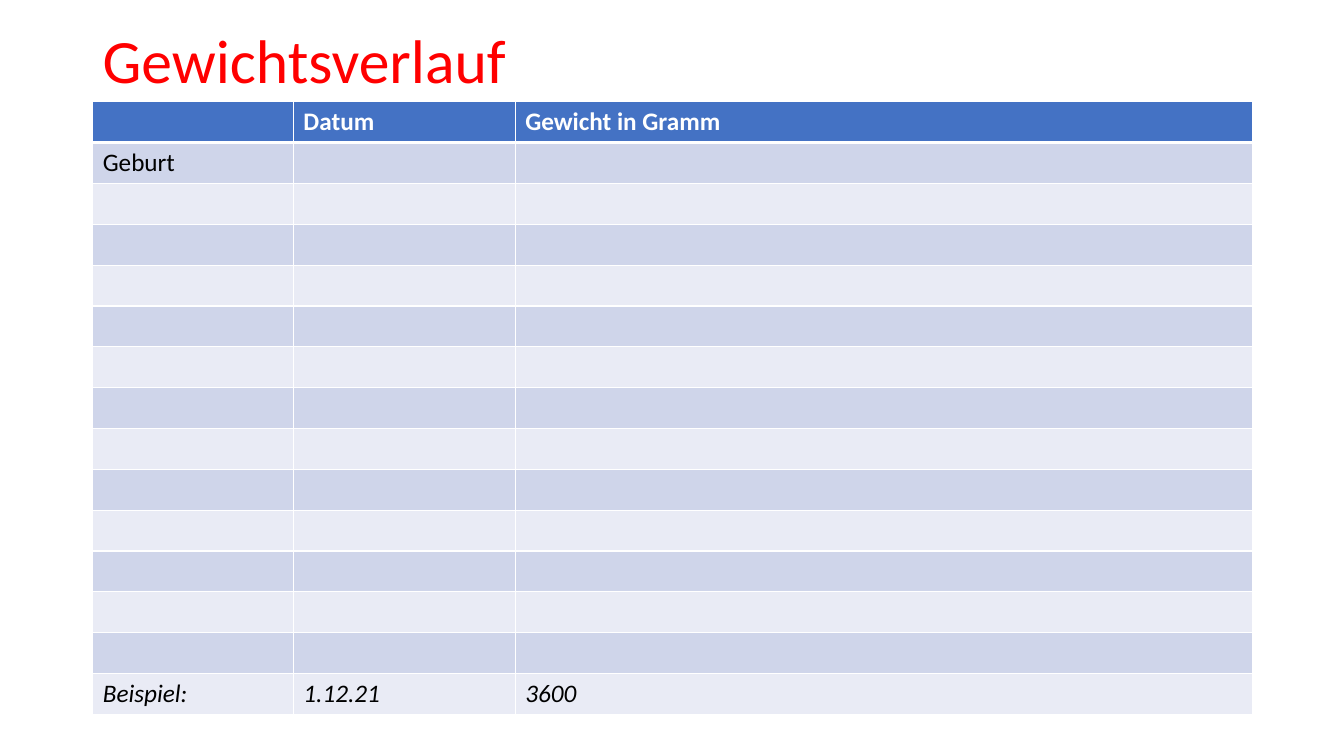
import dataclasses

import pptx
import pptx.dml.color
import pptx.enum.text
import pptx.oxml
import pptx.oxml.ns
import pptx.util

Inches = pptx.util.Inches


@dataclasses.dataclass(frozen=True)
class Theme:
    font: str = "Calibri"
    title_size: int = 44
    cell_size: int = 18
    title: str = "FF0000"
    text: str = "000000"
    header: str = "4472C4"
    header_text: str = "FFFFFF"
    bands: tuple = ("E9EBF5", "CFD5EA")
    grid: str = "FFFFFF"
    grid_width: int = 1
    header_rule_width: int = 3


def write_text(frame, text, *, font, size, color, bold=False, italic=False, line_spacing=None):
    paragraph = frame.paragraphs[0]
    paragraph.line_spacing = line_spacing
    run = paragraph.add_run()
    run.text = text
    run.font.name = font
    run.font.size = pptx.util.Pt(size)
    run.font.bold = bold
    run.font.italic = italic
    run.font.color.rgb = pptx.dml.color.RGBColor.from_string(color)


class SlideBuilder:
    def __init__(self, slide, theme):
        self.slide = slide
        self.theme = theme

    def title(self, text, left, top, width, height):
        box = self.slide.shapes.add_textbox(Inches(left), Inches(top), Inches(width), Inches(height))
        frame = box.text_frame
        frame.word_wrap = True
        frame.vertical_anchor = pptx.enum.text.MSO_ANCHOR.MIDDLE
        write_text(frame, text, font=self.theme.font, size=self.theme.title_size,
                   color=self.theme.title, line_spacing=0.9)

    def border(self, cell, side, width):
        line = pptx.oxml.parse_xml(
            f'<a:{side} {pptx.oxml.ns.nsdecls("a")} w="{pptx.util.Pt(width)}">'
            f'<a:solidFill><a:srgbClr val="{self.theme.grid}"/></a:solidFill></a:{side}>')
        cell._tc.get_or_add_tcPr().append(line)

    def cell(self, cell, text, row, italic):
        theme = self.theme
        is_header = row == 0
        top_width = theme.header_rule_width if row == 1 else theme.grid_width
        bottom_width = theme.header_rule_width if is_header else theme.grid_width
        for side, width in (("lnL", theme.grid_width), ("lnR", theme.grid_width),
                            ("lnT", top_width), ("lnB", bottom_width)):
            self.border(cell, side, width)
        fill = theme.header if is_header else theme.bands[row % 2]
        cell.fill.solid()
        cell.fill.fore_color.rgb = pptx.dml.color.RGBColor.from_string(fill)
        if text:
            write_text(cell.text_frame, text, font=theme.font, size=theme.cell_size,
                       color=theme.header_text if is_header else theme.text,
                       bold=is_header, italic=italic)

    def table(self, rows, left, top, column_widths, row_height):
        table = self.slide.shapes.add_table(
            len(rows), len(column_widths), Inches(left), Inches(top),
            Inches(sum(column_widths)), Inches(row_height * len(rows))).table
        for column, width in zip(table.columns, column_widths):
            column.width = Inches(width)
        for index, texts in enumerate(rows):
            table.rows[index].height = Inches(row_height)
            for column, text in enumerate(texts):
                self.cell(table.cell(index, column), text, index, italic=index == len(rows) - 1)


def main():
    presentation = pptx.Presentation()
    presentation.slide_width = Inches(13.33)
    presentation.slide_height = Inches(7.5)
    slide = presentation.slides.add_slide(presentation.slide_layouts[6])
    builder = SlideBuilder(slide, Theme())

    builder.title("Gewichtsverlauf", 0.92, -0.09, 11.5, 1.45)
    open_entries = [("", "", "")] * 12
    weight_log = [
        ("", "Datum", "Gewicht in Gramm"),
        ("Geburt", "", ""),
        *open_entries,
        ("Beispiel:", "1.12.21", "3600"),
    ]
    builder.table(weight_log, 0.92, 1.01, (1.99, 2.2, 7.31), 6.08 / len(weight_log))
    presentation.save("out.pptx")


if __name__ == "__main__":
    main()
